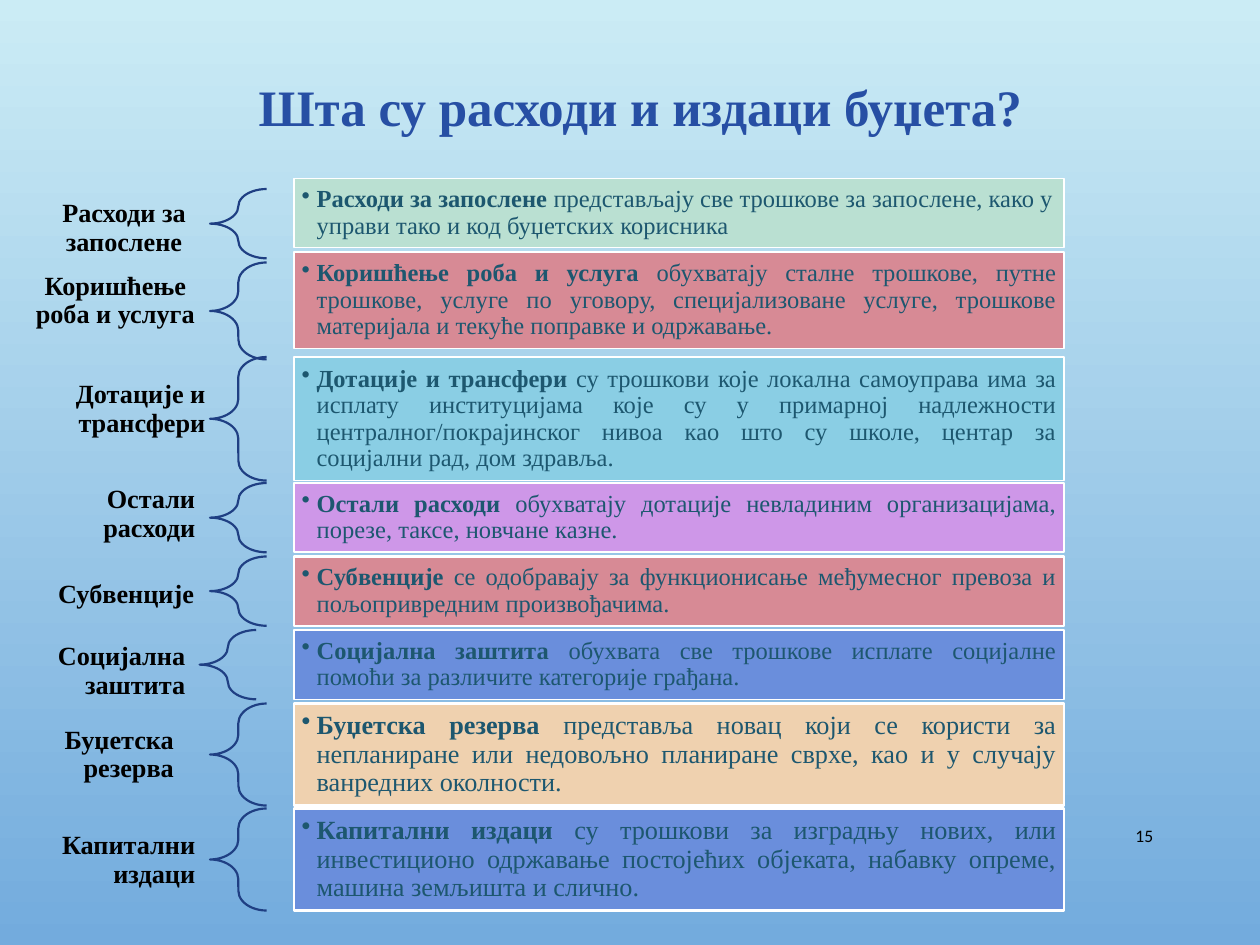
"""Build the slide that explains the kinds of budget expenditure."""
from lxml import etree
from pptx import Presentation
from pptx.dml.color import RGBColor
from pptx.enum.shapes import MSO_SHAPE
from pptx.enum.text import MSO_ANCHOR, PP_ALIGN
from pptx.oxml.ns import qn
from pptx.util import Pt

BRACE, RECTANGLE = MSO_SHAPE.LEFT_BRACE, MSO_SHAPE.RECTANGLE
MIDDLE = MSO_ANCHOR.MIDDLE
LEFT, CENTER, RIGHT, JUSTIFY = PP_ALIGN.LEFT, PP_ALIGN.CENTER, PP_ALIGN.RIGHT, PP_ALIGN.JUSTIFY
SERIF, SANS = "Times New Roman", "Calibri"

COLORS = {
    "sky_top": "CBECF5", "sky_bottom": "73ABDD", "title": "274FA4",
    "brace": "1F3F83", "body": "1D576F", "black": "000000", "white": "FFFFFF",
    "mint": "BAE0D2", "rose": "D78A95", "aqua": "8ACEE4",
    "violet": "CE97E8", "blue": "6A8EDC", "sand": "EFD1AF",
}

BAR_LEFT, BAR_WIDTH = 168, 440
BRACE_WIDTH = 32.4
THIN, THICK = 0.75, 1.25

CATEGORIES = [
    dict(term="Расходи за запослене",
         meaning=" представљају све трошкове за запослене, како у управи тако и код буџетских корисника",
         bar=(102, 39.6), color="mint", border=THIN, align=LEFT, brace=(120, 108),
         label=(21.6, 123.1, 98.6, 15.1), label_align=CENTER),
    dict(term="Коришћење роба и услуга",
         meaning=" обухватају сталне трошкове, путне трошкове, услуге по уговору, специјализоване услуге, "
                 "трошкове материјала и текуће поправке и одржавање.",
         bar=(144, 55.4), color="rose", border=THIN, brace=(120, 150),
         label=(0, 154.8, 131.8, 34.6), label_align=CENTER),
    dict(term="Дотације и трансфери",
         meaning=" су трошкови које локална самоуправа има за исплату институцијама које су у примарној "
                 "надлежности централног/покрајинског нивоа као што су школе, центар за социјални рад, "
                 "дом здравља.",
         bar=(204, 70.6), color="aqua", border=THIN, brace=(120, 204),
         label=(0, 227.5, 126, 13)),
    dict(term="Остали расходи",
         meaning=" обухватају дотације невладиним организацијама, порезе, таксе, новчане казне.",
         bar=(276, 39.6), color="violet", brace=(120, 276), label=(0, 282.2, 120.2, 23.8)),
    dict(term="Субвенције",
         meaning=" сe одобравају за функционисање међумесног превоза и пољопривредним произвођачима.",
         bar=(318, 39.6), color="rose", brace=(120, 318), label=(7.9, 331.9, 111.6, 15.8)),
    dict(term="Социјална заштита",
         meaning=" обухвата све трошкове исплате социјалне помоћи за различите категорије грађана.",
         bar=(360, 39.6), color="blue", border=THIN, brace=(114, 360),
         label=(4.3, 372.2, 110.2, 23)),
    dict(term="Буџетска резерва",
         meaning=" представља новац који се користи за непланиране или недовољно планиране сврхе, "
                 "као и у случају ванредних околности.",
         bar=(402, 58.3), color="sand", size=15, brace=(120, 402),
         label=(3.6, 419.8, 104.4, 23)),
    dict(term="Капитални издаци",
         meaning=" су трошкови за изградњу нових, или инвестиционо одржавање постојећих објеката, "
                 "набавку опреме, машина земљишта и слично.",
         bar=(462, 58.3), color="blue", size=15, brace=(120, 462),
         label=(8.6, 480.2, 111.6, 23)),
]


def rgb(name):
    """Return the named colour."""
    return RGBColor.from_string(COLORS[name])


def apply_format(target, values):
    """Set each attribute in values on target."""
    for attribute, value in values.items():
        setattr(target, attribute, value)


def paint_background(slide):
    """Fill the background with a gradient from top to bottom."""
    fill = slide.background.fill
    fill.gradient()
    fill.gradient_angle = 270
    for stop, name, position in zip(fill.gradient_stops, ("sky_top", "sky_bottom"), (0, 1)):
        apply_format(stop, {"position": position})
        stop.color.rgb = rgb(name)


def set_frame(frame, side, upright):
    """Wrap the text, centre it vertically and set the margins."""
    apply_format(frame, {
        "word_wrap": True, "vertical_anchor": MIDDLE,
        "margin_left": Pt(side), "margin_right": Pt(side),
        "margin_top": Pt(upright), "margin_bottom": Pt(upright),
    })


def add_run(paragraph, text, size, color, bold=False, font=SERIF):
    """Append a formatted run."""
    run = paragraph.add_run()
    run.text = text
    apply_format(run.font, {"name": font, "size": Pt(size), "bold": bold})
    run.font.color.rgb = rgb(color)


def add_text(slide, box, text, size, color, align, bold=True, font=SERIF,
             margins=(7.2, 3.6), spacing=1.0):
    """Add a text box with a single paragraph."""
    frame = slide.shapes.add_textbox(*map(Pt, box)).text_frame
    set_frame(frame, *margins)
    paragraph = frame.paragraphs[0]
    apply_format(paragraph, {"alignment": align, "line_spacing": spacing})
    add_run(paragraph, text, size, color, bold, font)


def add_brace(slide, left, top, height):
    """Add the brace that ties a label to its bar."""
    brace = slide.shapes.add_shape(BRACE, Pt(left), Pt(top), Pt(BRACE_WIDTH), Pt(height))
    brace.shadow.inherit = False
    brace.adjustments[0] = 0.35
    brace.fill.background()
    brace.line.color.rgb = rgb("brace")
    brace.line.width = Pt(1.25)


def add_bullet(paragraph):
    """Give the paragraph a hanging round bullet."""
    properties = paragraph._p.get_or_add_pPr()
    apply_indent = {"marL": Pt(8.64), "indent": -Pt(8.64)}
    for key, value in apply_indent.items():
        properties.set(key, str(int(value)))
    etree.SubElement(properties, qn("a:buChar")).set("char", "•")


def add_bar(slide, category):
    """Add the coloured bar that explains a category."""
    top, height = category["bar"]
    bar = slide.shapes.add_shape(RECTANGLE, Pt(BAR_LEFT), Pt(top), Pt(BAR_WIDTH), Pt(height))
    bar.shadow.inherit = False
    bar.fill.solid()
    bar.fill.fore_color.rgb = rgb(category["color"])
    bar.line.color.rgb = rgb("white")
    bar.line.width = Pt(category.get("border", THICK))
    set_frame(bar.text_frame, 4.3, 4.3)
    paragraph = bar.text_frame.paragraphs[0]
    add_bullet(paragraph)
    apply_format(paragraph, {"alignment": category.get("align", JUSTIFY), "line_spacing": 0.9})
    size = category.get("size", 14)
    add_run(paragraph, category["term"], size, "body", bold=True)
    add_run(paragraph, category["meaning"], size, "body")


def add_category(slide, category):
    """Add the brace, bar and label of a category."""
    add_brace(slide, *category["brace"], category["bar"][1])
    add_bar(slide, category)
    add_text(slide, category["label"], category["term"], 15, "black",
             category.get("label_align", RIGHT), margins=(8.64, 2.9), spacing=0.9)


def main():
    """Build and save the slide."""
    deck = Presentation()
    apply_format(deck, {"slide_width": Pt(720), "slide_height": Pt(540)})
    slide = deck.slides.add_slide(deck.slide_layouts[6])
    paint_background(slide)
    add_text(slide, (620.6, 463, 45.4, 28.8), "15", 10, "black", RIGHT, bold=False, font=SANS)
    add_text(slide, (42, 36, 648, 49), "Шта су расходи и издаци буџета?", 29.2, "title", CENTER)
    for category in CATEGORIES:
        add_category(slide, category)
    deck.save("out.pptx")


if __name__ == "__main__":
    main()
